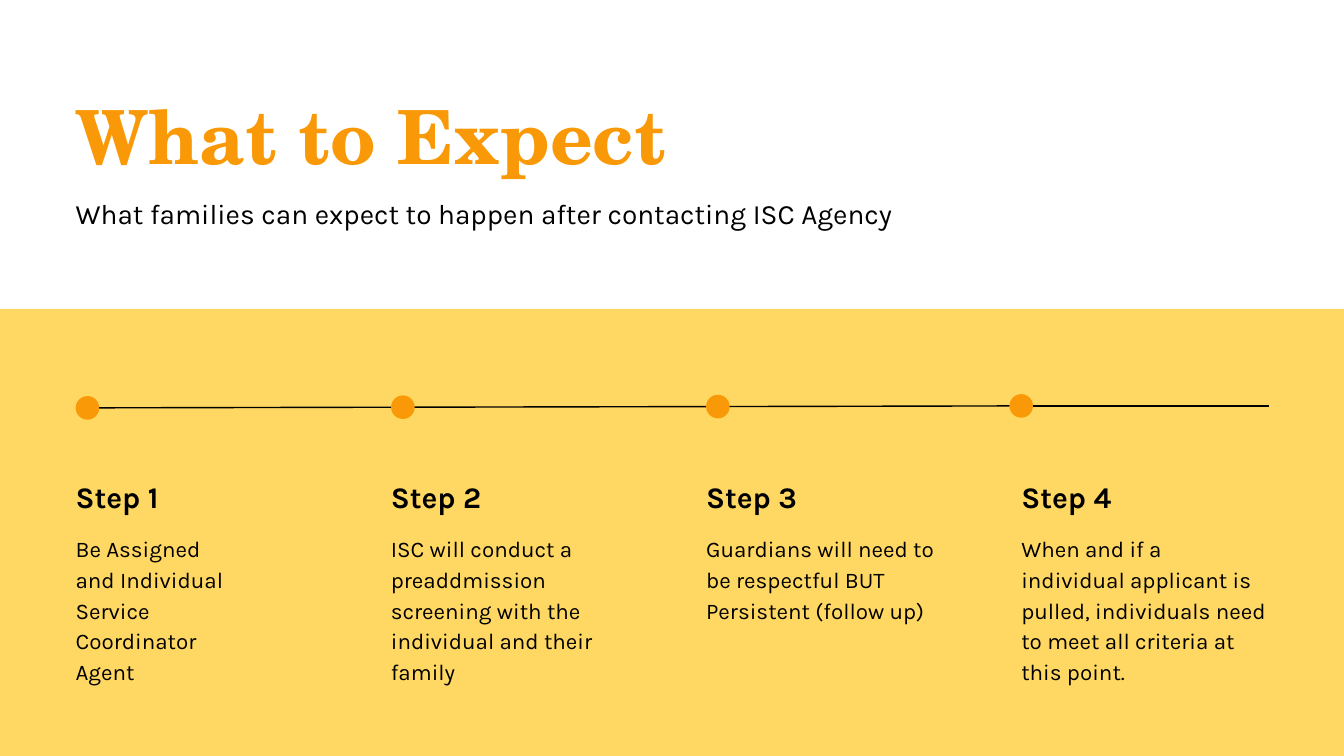
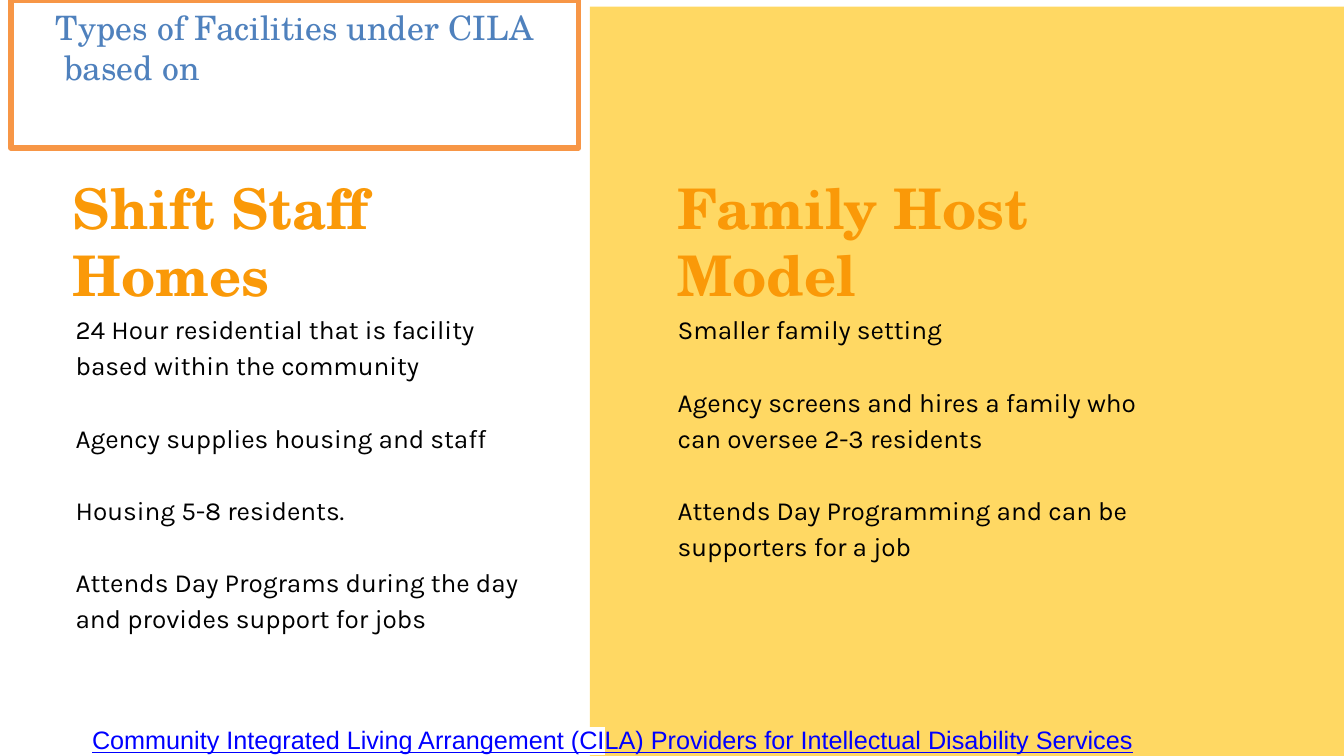
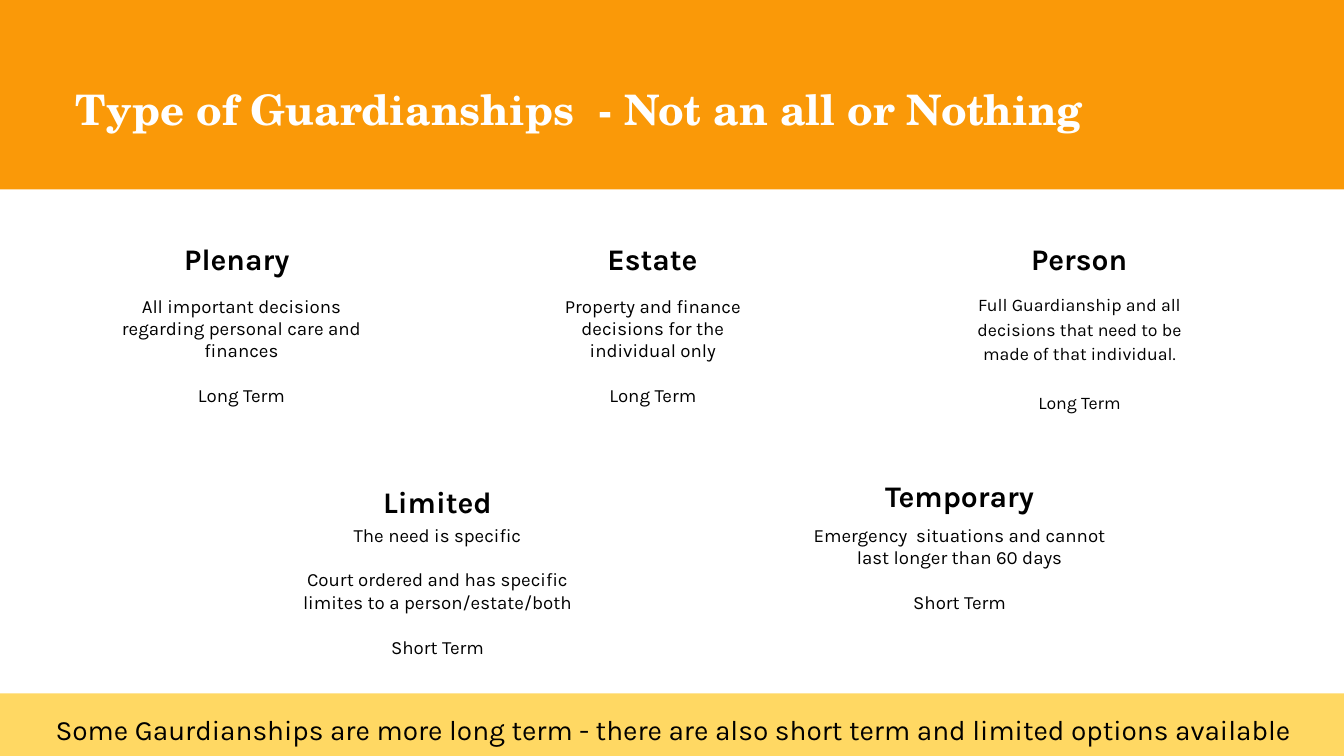
from itertools import pairwise

from lxml import etree
from pptx import Presentation
from pptx.dml.color import RGBColor
from pptx.enum.shapes import MSO_CONNECTOR, MSO_SHAPE
from pptx.enum.text import MSO_ANCHOR, PP_ALIGN
from pptx.oxml.ns import qn
from pptx.util import Pt

LEFT, CENTER = PP_ALIGN.LEFT, PP_ALIGN.CENTER
TOP = MSO_ANCHOR.TOP
RECTANGLE, OVAL = MSO_SHAPE.RECTANGLE, MSO_SHAPE.OVAL
STRAIGHT = MSO_CONNECTOR.STRAIGHT

COLORS = {
    "white": "FFFFFF",
    "black": "000000",
    "orange": "FA9908",
    "yellow": "FFD863",
    "frame": "F79646",
    "blue": "4F81BD",
    "link": "0000FF",
}
SERIF, SANS, LINK_FONT = "TeX Gyre Schola", "Karla", "Arial"

WIDTH, HEIGHT = 1440, 810
MARGIN = 81
INSET = 7.2
LINE_HEIGHT = 1.2  # of the font size, in Karla

DOT = 25.3
DOT_CENTERS = [(93.65, 437), (431.65, 436.3), (769.15, 435.6), (1094.15, 434.9)]
TIMELINE_END = (1359.5, 434.9)
STEP_PITCH = 337.75
STEPS = [
    ("Step 1", 164, "Be Assigned and Individual Service Coordinator Agent"),
    ("Step 2", 265, "ISC will conduct a preaddmission screening with the "
                    "individual and their family"),
    ("Step 3", 265, "Guardians will need to be respectful BUT Persistent (follow up)"),
    ("Step 4", 265, "When and if a individual applicant is pulled, individuals "
                    "need to meet all criteria at this point."),
]

# heading, left, width of the column, paragraphs
MODELS = [
    ("Shift Staff Homes", 78, MARGIN, 476, [
        "24 Hour residential that is facility based within the community",
        "Agency supplies housing and staff",
        "Housing 5-8 residents.",
        "Attends Day Programs during the day and provides support for jobs",
    ]),
    ("Family Host Model", 726, 726, 506, [
        "Smaller family setting",
        "Agency screens and hires a family who can oversee 2-3 residents",
        "Attends Day Programming and can be supporters for a job",
    ]),
]

HEADING_WIDTH = 345.6
# heading, its left and top, then left, top, width, size and spacing of the body
GUARDIANSHIPS = [
    ("Plenary", 81, 250.6, (108.7, 315.4, 300), 20, 1, [
        "All important decisions regarding personal care and finances",
        "Long Term"]),
    ("Estate", 526.3, 250.6, (597.6, 315.4, 203.8), 20, 1, [
        "Property and finance decisions for the individual only",
        "Long Term"]),
    ("Person", 983.5, 250.6, (1034.6, 311.8, 244), 19, 1.15, [
        "Full Guardianship and all decisions that need to be made of that individual.",
        "Long Term"]),
    ("Limited", 296, 510.5, (296, 560.9, HEADING_WIDTH), 20, 1, [
        "The need is specific",
        "Court ordered and has specific limites to a person/estate/both",
        "Short Term"]),
    ("Temporary", 855.4, 504, (855.4, 560.9, HEADING_WIDTH), 20, 1, [
        "Emergency  situations and cannot last longer than 60 days",
        "Short Term"]),
]


def rgb(name):
    return RGBColor.from_string(COLORS[name])


def add_page(deck):
    page = deck.slides.add_slide(deck.slide_layouts[6])
    page.background.fill.solid()
    page.background.fill.fore_color.rgb = rgb("white")
    return page


def add_filled(page, kind, left, top, width, height, color):
    shape = page.shapes.add_shape(kind, Pt(left), Pt(top), Pt(width), Pt(height))
    shape.shadow.inherit = False
    shape.fill.solid()
    shape.fill.fore_color.rgb = rgb(color)
    shape.line.fill.background()


def add_line(page, start, end):
    line = page.shapes.add_connector(
        STRAIGHT, Pt(start[0]), Pt(start[1]), Pt(end[0]), Pt(end[1]))
    line.line.color.rgb = rgb("black")
    line.line.width = Pt(1.5)
    etree.SubElement(line._element.spPr, qn("a:effectLst"))


def set_frame(frame, inset):
    frame.word_wrap = True
    frame.vertical_anchor = TOP
    frame.margin_left = frame.margin_right = Pt(inset)
    frame.margin_top = frame.margin_bottom = Pt(inset)


def style_para(para, size, font=SANS, color="black", bold=False, align=LEFT, spacing=1):
    para.alignment = align
    para.line_spacing = spacing
    para.font.size = Pt(size)
    para.font.name = font
    para.font.bold = bold
    para.font.color.rgb = rgb(color)


def add_text(page, texts, left, top, width, height, size, inset=0, spacing=1, **style):
    """Add one paragraph per text, set apart by the height of one line."""
    box = page.shapes.add_textbox(Pt(left), Pt(top), Pt(width), Pt(height))
    frame = box.text_frame
    set_frame(frame, inset)
    for index, text in enumerate(texts):
        para = frame.add_paragraph() if index else frame.paragraphs[0]
        para.text = text
        style_para(para, size, spacing=spacing, **style)
        if index:
            para.space_before = Pt(round(size * LINE_HEIGHT * spacing, 2))
    return box


def add_title(page, text, left, top, width, height, size, color="orange", spacing=1):
    add_text(page, [text], left, top, width, height, size,
             font=SERIF, color=color, bold=True, spacing=spacing)


def add_heading(page, text, left, top, width, align=LEFT):
    add_text(page, [text], left, top, width, 39, 32, bold=True, align=align, spacing=1.2)


def highlight(span, color):
    mark = etree.SubElement(span._r.get_or_add_rPr(), qn("a:highlight"))
    etree.SubElement(mark, qn("a:srgbClr"), val=COLORS[color])


def add_topic_frame(page):
    shape = page.shapes.add_shape(RECTANGLE, Pt(11.5), Pt(0), Pt(608.5), Pt(158.5))
    shape.shadow.inherit = False
    shape.fill.background()
    shape.line.color.rgb = rgb("frame")
    shape.line.width = Pt(6)
    frame = shape.text_frame
    set_frame(frame, INSET)
    first, second = frame.paragraphs[0], frame.add_paragraph()
    first.text, second.text = "Types of Facilities under CILA", "based on"
    style_para(first, 36, SERIF, "blue", align=CENTER)
    style_para(second, 36, SERIF, "blue")
    second._p.get_or_add_pPr().set("marL", str(Pt(50)))


def add_provider_line(page):
    box = add_text(page, ["Community Integrated Living Arrangement (CI"],
                   91.5, 765.5, 1231, 37.5, 27, inset=INSET, spacing=1.11,
                   font=LINK_FONT, color="link")
    para = box.text_frame.paragraphs[0]
    para.font.underline = True
    para.add_run().text = "LA) Providers for Intellectual Disability Services"
    for span, color in zip(para.runs, ("white", "yellow")):
        highlight(span, color)


def build_steps(deck):
    page = add_page(deck)
    add_filled(page, RECTANGLE, 0, 331, WIDTH, HEIGHT - 331, "yellow")
    for start, end in pairwise(DOT_CENTERS + [TIMELINE_END]):
        add_line(page, start, end)
    for x, y in DOT_CENTERS:
        add_filled(page, OVAL, x - DOT / 2, y - DOT / 2, DOT, DOT, "orange")
    add_title(page, "What to Expect", MARGIN, 86.4, 1278, 97, 80, spacing=1.1)
    add_text(page, ["What families can expect to happen after contacting ISC Agency"],
             MARGIN, 195.8, 1006, 36, 30, spacing=1.4)
    for index, (heading, width, text) in enumerate(STEPS):
        left = MARGIN + index * STEP_PITCH
        add_heading(page, heading, left, 505.4, 265)
        add_text(page, [text], left, 568.8, width, 163, 24, spacing=1.15)


def build_facilities(deck):
    page = add_page(deck)
    add_filled(page, RECTANGLE, 632, 7.2, WIDTH - 632, HEIGHT - 7.2, "yellow")
    for heading, heading_left, left, width, texts in MODELS:
        add_title(page, heading, heading_left, 185.8, width, 145, 60)
        add_text(page, texts, left, 331.2, width, 346, 28, spacing=1.15)
    add_topic_frame(page)
    add_provider_line(page)


def build_guardianships(deck):
    page = add_page(deck)
    add_filled(page, RECTANGLE, 0, 0, WIDTH, 203, "orange")
    add_filled(page, RECTANGLE, 0, 743, WIDTH, HEIGHT - 743, "yellow")
    add_title(page, "Type of Guardianships  - Not an all or Nothing",
              MARGIN, 67.7, 1278, 55, 45, color="white", spacing=1.4)
    for heading, left, top, body, size, spacing, texts in GUARDIANSHIPS:
        add_heading(page, heading, left, top, HEADING_WIDTH, CENTER)
        add_text(page, texts, *body, 121, size, spacing=spacing, align=CENTER)
    add_text(page, ["Some Gaurdianships are more long term - there are also "
                    "short term and limited options available"],
             15.8, 756.7, 1412, 51, 30, inset=INSET, align=CENTER)


def main():
    deck = Presentation()
    deck.slide_width, deck.slide_height = Pt(WIDTH), Pt(HEIGHT)
    build_steps(deck)
    build_facilities(deck)
    build_guardianships(deck)
    deck.save("out.pptx")


if __name__ == "__main__":
    main()
